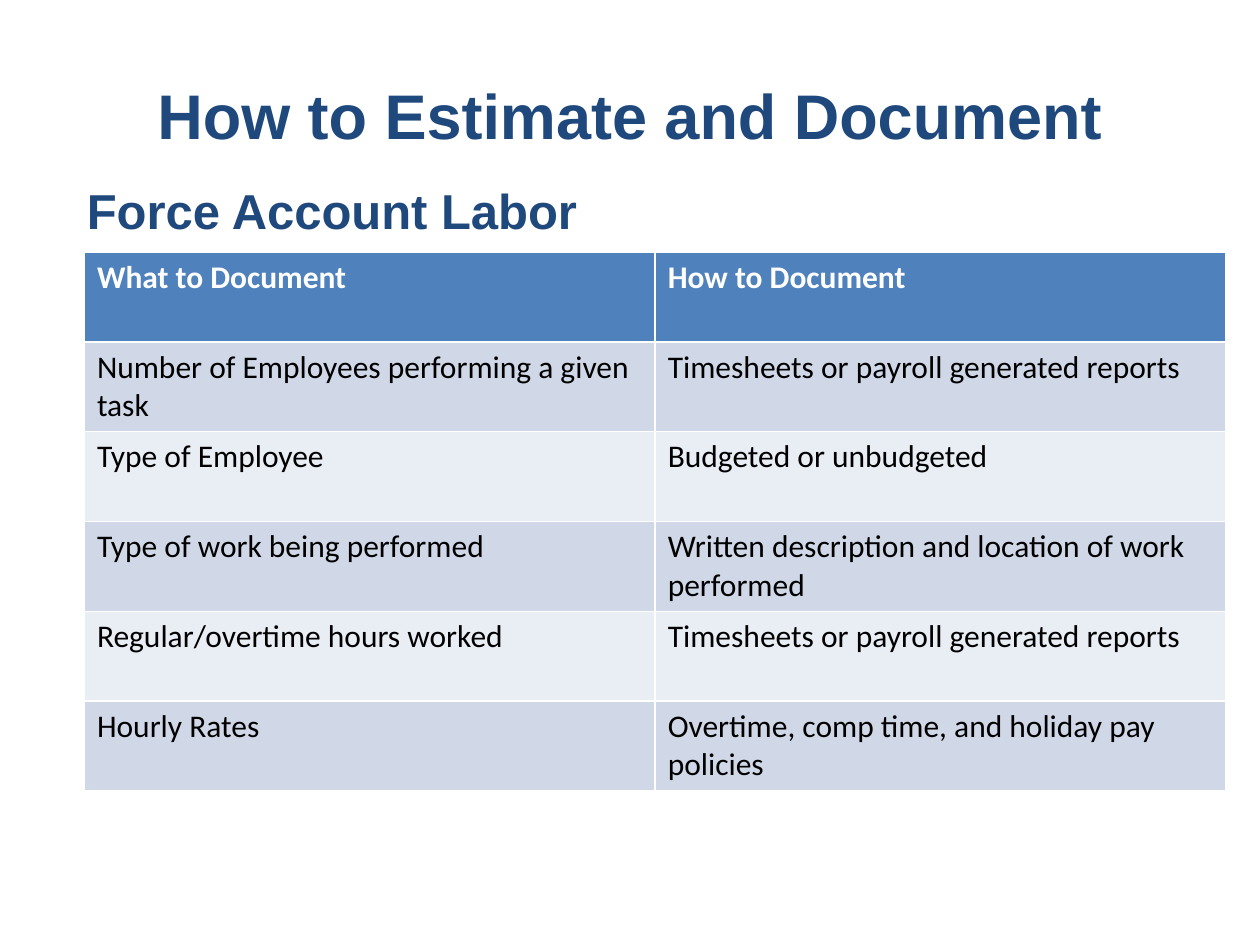
"""Build the slide on documenting force account labor."""
from dataclasses import dataclass

from pptx import Presentation
from pptx.dml.color import RGBColor as Rgb
from pptx.enum import text
from pptx.util import Inches, Pt


@dataclass(frozen=True)
class Theme:
    """Hold the fonts, type sizes and colours."""
    head: str = "Arial"
    body: str = "Calibri"
    title: int = 36
    sub: int = 28
    cell: int = 18
    navy: str = "1F497D"
    blue: str = "4F81BD"
    white: str = "FFFFFF"
    black: str = "000000"
    bands: tuple = ("E9EDF4", "D0D8E8")


THEME = Theme()
ROWS = [
    ("What to Document", "How to Document"),
    ("Number of Employees performing a given task",
     "Timesheets or payroll generated reports"),
    ("Type of Employee", "Budgeted or unbudgeted"),
    ("Type of work being performed",
     "Written description and location of work performed"),
    ("Regular/overtime hours worked",
     "Timesheets or payroll generated reports"),
    ("Hourly Rates", "Overtime, comp time, and holiday pay policies"),
]


def style(para, name, size, color, bold):
    """Set the font of a paragraph."""
    font = para.font
    font.name, font.size, font.bold = name, Pt(size), bold
    font.color.rgb = Rgb.from_string(color)


def add_head(slide, words, area, size, align, anchor):
    """Add a bold navy heading."""
    frame = slide.shapes.add_textbox(*map(Inches, area)).text_frame
    frame.word_wrap = True
    frame.vertical_anchor = anchor
    para = frame.paragraphs[0]
    para.text, para.alignment = words, align
    style(para, THEME.head, size, THEME.navy, True)


def fill_cell(cell, words, row):
    """Write one table cell and colour it by its row."""
    top = row == 0
    cell.text = words
    cell.fill.solid()
    shade = THEME.blue if top else THEME.bands[row % 2]
    cell.fill.fore_color.rgb = Rgb.from_string(shade)
    color = THEME.white if top else THEME.black
    style(cell.text_frame.paragraphs[0], THEME.body, THEME.cell, color, top)


def add_grid(slide, rows, area):
    """Add the table with equal rows and columns."""
    table = slide.shapes.add_table(
        len(rows), len(rows[0]), *map(Inches, area)).table
    for row, line in enumerate(rows):
        for col, words in enumerate(line):
            fill_cell(table.cell(row, col), words, row)


def main():
    """Build and save the slide."""
    deck = Presentation()
    deck.slide_width, deck.slide_height = Inches(10), Inches(7.5)
    slide = deck.slides.add_slide(deck.slide_layouts[6])
    align, anchor = text.PP_ALIGN, text.MSO_ANCHOR
    add_head(slide, "How to Estimate and Document", (0.5, 0.28, 9, 1.25),
             THEME.title, align.CENTER, anchor.MIDDLE)
    add_head(slide, "Force Account Labor", (0.59, 1.38, 9.11, 4.9),
             THEME.sub, align.LEFT, anchor.TOP)
    add_grid(slide, ROWS, (0.67, 2, 9.06, 4.28))
    deck.save("out.pptx")


if __name__ == "__main__":
    main()
